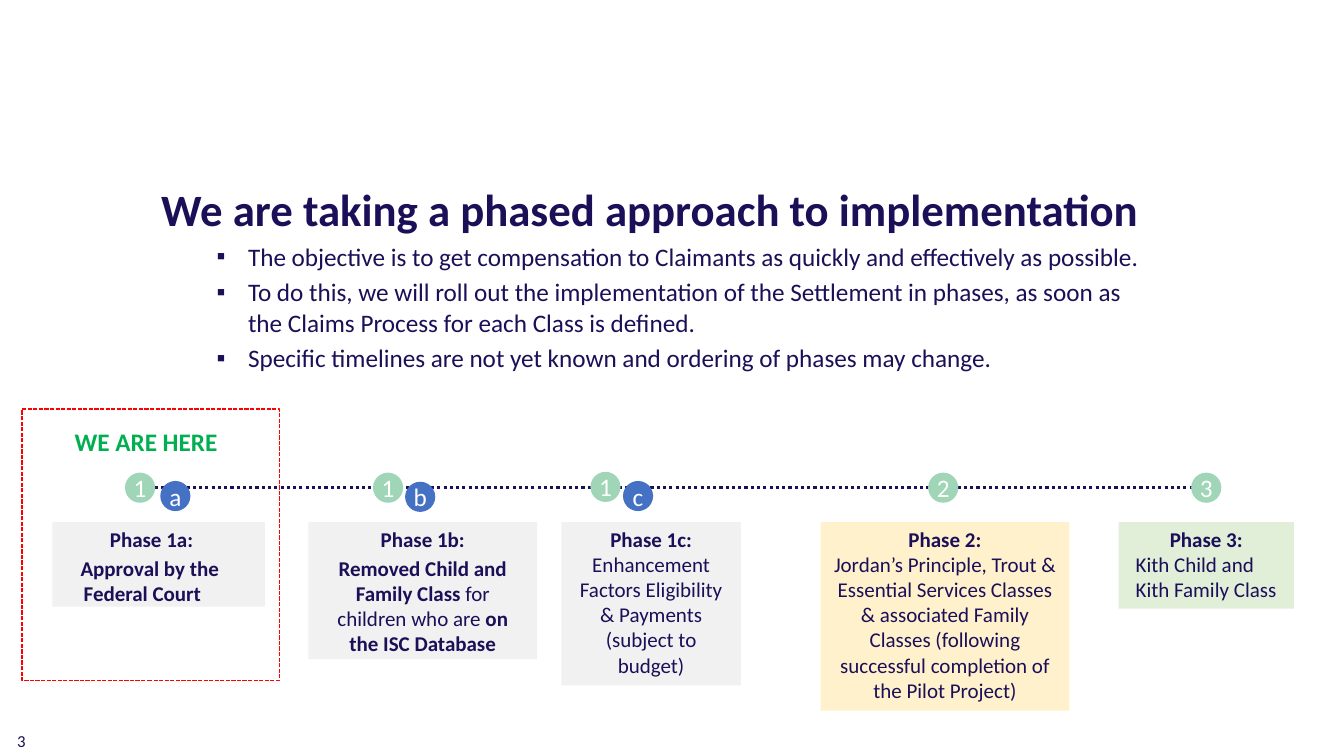
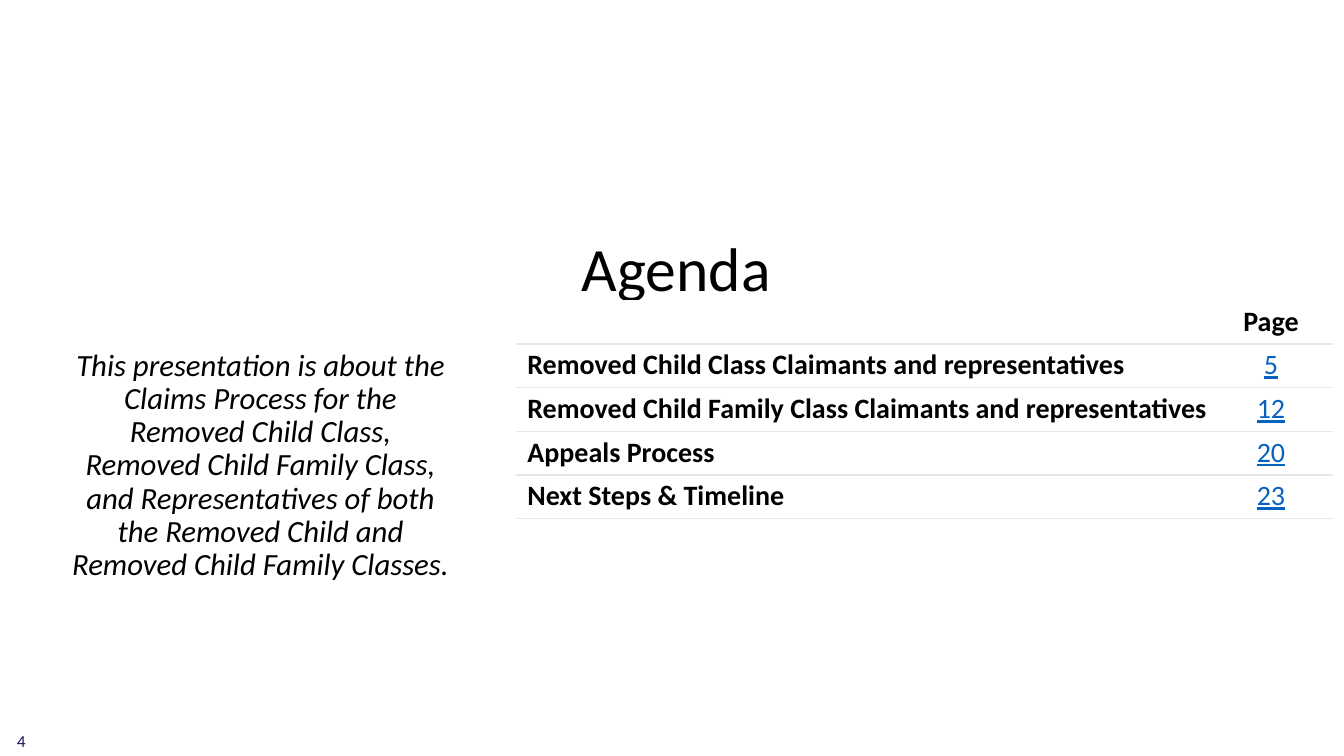
import pptx
import pptx.util
import pptx.dml.color
import pptx.enum.dml
import pptx.enum.shapes
import pptx.enum.text
import pptx.oxml
import pptx.oxml.ns
import lxml.etree

Cm = pptx.util.Cm
Pt = pptx.util.Pt
ALIGN = pptx.enum.text.PP_ALIGN
ANCHOR = pptx.enum.text.MSO_ANCHOR
SHAPE = pptx.enum.shapes.MSO_SHAPE
DASH = pptx.enum.dml.MSO_LINE

FONT = "Calibri"
HUES = {
    "navy": "1B0F58",
    "black": "000000",
    "white": "FFFFFF",
    "mint": "A0D6B7",
    "blue": "4471C4",
    "link": "0562C1",
    "grey": "F1F1F1",
    "cream": "FFF1CC",
    "sage": "E1EFD9",
    "red": "FF0000",
    "green": "00AF50",
    "rule": "E7E6E6",
}

GOALS = [
    "The objective is to get compensation to Claimants as quickly and effectively as possible.",
    "To do this, we will roll out the implementation of the Settlement in phases, "
    "as soon as the Claims Process for each Class is defined.",
    "Specific timelines are not yet known and ordering of phases may change.",
]
DOTS = [
    ("1", 3.15, 11.91, "mint"), ("a", 4.04, 12.12, "blue"),
    ("1", 9.4, 11.91, "mint"), ("b", 10.21, 12.14, "blue"),
    ("1", 14.88, 11.89, "mint"), ("c", 15.7, 12.12, "blue"),
    ("2", 23.39, 11.91, "mint"), ("3", 30.02, 11.91, "mint"),
]
MIDDLE = [
    ("Phase 1b:",
     [("Removed Child and Family Class", True), (" for children who are ", False),
      ("on the ISC Database", True)],
     (7.77, 5.77, 3.45), "grey", 0.64, 2.6),
    ("Phase 1c:",
     "Enhancement Factors Eligibility & Payments (subject to budget)",
     (14.15, 4.52, 4.11), "grey", 0.46, 0),
    ("Phase 2:",
     "Jordan’s Principle, Trout & Essential Services Classes & associated Family "
     "Classes (following successful completion of the Pilot Project)",
     (20.68, 6.27, 4.75), "cream", 0.33, 0),
]
TOPICS = [
    ("Removed Child Class Claimants and representatives", "5"),
    ("Removed Child Family Class Claimants and representatives", "12"),
    ("Appeals Process", "20"),
    ("Next Steps & Timeline", "23"),
]
ABOUT = ("This presentation is about the Claims Process for the Removed Child Class,\v"
         "Removed Child Family Class, and Representatives of both the Removed Child "
         "and Removed Child Family Classes.")


def hue(name):
    return pptx.dml.color.RGBColor.from_string(HUES[name])


def place(item, left, top, width, height):
    item.left, item.top = Cm(left), Cm(top)
    item.width, item.height = Cm(width), Cm(height)


def setup(frame, left=0, top=0, right=0, wrap=True, anchor=ANCHOR.TOP):
    frame.margin_left, frame.margin_top = Cm(left), Cm(top)
    frame.margin_right, frame.margin_bottom = Cm(right), 0
    frame.auto_size = pptx.enum.text.MSO_AUTO_SIZE.NONE
    frame.word_wrap = wrap
    frame.vertical_anchor = anchor


def write(frame, text, size, color="navy", bold=False, italic=False,
          align=ALIGN.LEFT, before=0, left=0, first=0, mark=None):
    para = frame.paragraphs[0]
    if para.text:
        para = frame.add_paragraph()
    if isinstance(text, str):
        para.text = text
    else:
        for words, heavy in text:
            run = para.add_run()
            run.text = words
            run.font.bold = heavy
    para.alignment = align
    para.space_before = Pt(before)
    props = para._p.get_or_add_pPr()
    props.set("marL", str(Cm(left)))
    props.set("indent", str(Cm(first)))
    if mark:
        bullet = pptx.oxml.ns.qn("a:buChar")
        lxml.etree.SubElement(props, bullet).set("char", mark)
    font = para.font
    font.name, font.size, font.italic = FONT, Pt(size), italic
    font.color.rgb = hue(color)
    if isinstance(text, str):
        font.bold = bold
    return para


def label(slide, box, text, size, top=0, left=0, **style):
    item = slide.shapes.add_textbox(0, 0, 0, 0)
    place(item, *box)
    setup(item.text_frame, left, top)
    return write(item.text_frame, text, size, **style)


def head(slide, box, text, size, **style):
    title = slide.shapes.title
    place(title, *box)
    setup(title.text_frame, top=0.03, wrap=False)
    write(title.text_frame, text, size, **style)


def folio(slide, number):
    para = label(slide, (0.33, 18.49, 0.69, 0.48), str(number), 12, left=0.1)
    para.line_spacing = Pt(12.4)


def block(slide, kind, box, fill=None):
    item = slide.shapes.add_shape(kind, 0, 0, 0, 0)
    place(item, *box)
    item.shadow.inherit = False
    item.line.fill.background()
    if fill:
        item.fill.solid()
        item.fill.fore_color.rgb = hue(fill)
    else:
        item.fill.background()
    return item


def stroke(line, color, width, dash):
    line.color.rgb = hue(color)
    line.width = Pt(width)
    line.dash_style = dash


def track(slide, left, right, top):
    kind = pptx.enum.shapes.MSO_CONNECTOR.STRAIGHT
    line = slide.shapes.add_connector(kind, Cm(left), Cm(top), Cm(right), Cm(top))
    stroke(line.line, "navy", 2.25, DASH.ROUND_DOT)
    lxml.etree.SubElement(line._element.spPr, pptx.oxml.ns.qn("a:effectLst"))


def dot(slide, text, left, top, fill):
    item = block(slide, SHAPE.OVAL, (left, top, 0.76, 0.76), fill)
    setup(item.text_frame, wrap=False, anchor=ANCHOR.MIDDLE)
    write(item.text_frame, text, 18, "white", align=ALIGN.CENTER)


def panel(slide, span, fill, left=0, right=0):
    x, width, height = span
    item = block(slide, SHAPE.RECTANGLE, (x, 13.16, width, height), fill)
    setup(item.text_frame, left, 0.1, right)
    return item.text_frame


def phases(slide):
    frame = panel(slide, (1.32, 5.36, 2.13), "grey")
    write(frame, "Phase 1a:", 15, bold=True, left=1.45)
    write(frame, "Approval by the Federal Court", 15, bold=True,
          before=2.6, left=0.79, first=-0.08)
    for name, text, span, fill, side, gap in MIDDLE:
        frame = panel(slide, span, fill, side, side)
        write(frame, name, 15, bold=True, align=ALIGN.CENTER)
        write(frame, text, 15, align=ALIGN.CENTER, before=gap)
    frame = panel(slide, (28.19, 4.42, 2.18), "sage", 0.43, 0.25)
    write(frame, "Phase 3:", 15, bold=True, left=0.86)
    write(frame, "Kith Child and Kith Family Class", 15)


def plan(deck):
    slide = deck.slides.add_slide(deck.slide_layouts[1])
    head(slide, (4.06, 4.55, 24.69, 1.42),
         "We are taking a phased approach to implementation", 32, bold=True)
    body = slide.placeholders[1]
    place(body, 5.46, 5.89, 23.37, 4)
    setup(body.text_frame, top=0.18)
    for spot, goal in enumerate(GOALS):
        write(body.text_frame, goal, 18, before=4 if spot else 0,
              left=0.79, first=-0.79, mark="▪")
    track(slide, 3.91, 30.68, 12.29)
    for item in DOTS:
        dot(slide, *item)
    phases(slide)
    frame = block(slide, SHAPE.RECTANGLE, (0.56, 10.31, 6.48, 6.84))
    stroke(frame.line, "red", 1, DASH.SQUARE_DOT)
    label(slide, (1.88, 10.75, 4.5, 0.8), "WE ARE HERE", 18, color="green", bold=True)
    folio(slide, 3)


def border(cell, sides):
    props = cell._tc.get_or_add_tcPr()
    for spot, side in enumerate(sides):
        props.insert(spot, pptx.oxml.parse_xml(
            f'<a:{side} {pptx.oxml.ns.nsdecls("a")} w="{Pt(1)}"><a:solidFill>'
            f'<a:srgbClr val="{HUES["rule"]}"/></a:solidFill></a:{side}>'))


def entry(cell, text, row, **style):
    cell.fill.solid()
    cell.fill.fore_color.rgb = hue("white")
    cell.margin_left = cell.margin_right = cell.margin_bottom = 0
    cell.margin_top = Cm(0.1)
    border(cell, ["lnT", "lnB"] if row else ["lnB"])
    para = write(cell.text_frame, text, 20, **style)
    para.font.underline = style["color"] == "link"


def index(slide):
    rows = [("", "Page")] + TOPICS
    wide = (17.45, 3.1)
    high = 1.1
    grid = slide.shapes.add_table(len(rows), 2, Cm(13.03), Cm(7.57),
                                  Cm(sum(wide)), Cm(high * len(rows))).table
    grid.first_row = grid.horz_banding = False
    for column, width in zip(grid.columns, wide):
        column.width = Cm(width)
    for row, (topic, page) in enumerate(rows):
        grid.rows[row].height = Cm(high)
        entry(grid.cell(row, 0), topic, row, color="black", bold=True, left=0.26)
        entry(grid.cell(row, 1), page, row, color="link" if row else "black",
              bold=not row, align=ALIGN.CENTER)


def agenda(deck):
    slide = deck.slides.add_slide(deck.slide_layouts[5])
    head(slide, (14.66, 5.77, 4.85, 1.93), "Agenda", 44, color="black")
    folio(slide, 4)
    index(slide)
    para = label(slide, (1.7, 8.51, 9.73, 6.25), ABOUT, 22, top=0.3,
                 color="black", italic=True, align=ALIGN.CENTER)
    para.line_spacing = 0.9


def main():
    deck = pptx.Presentation()
    deck.slide_width, deck.slide_height = Cm(33.87), Cm(19.05)
    plan(deck)
    agenda(deck)
    deck.save("out.pptx")


if __name__ == "__main__":
    main()
